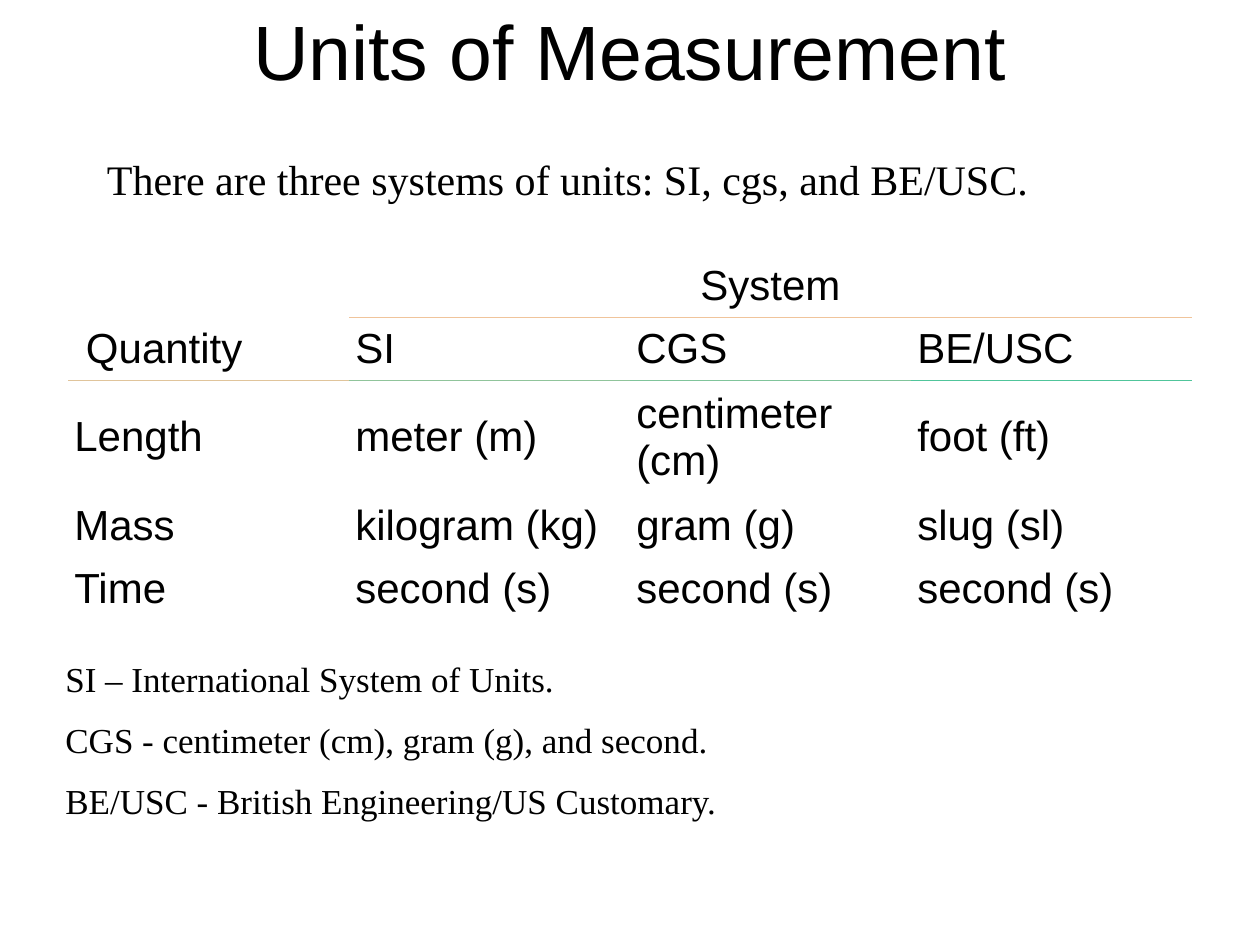
from dataclasses import dataclass

from lxml.etree import SubElement
from pptx import Presentation
from pptx.dml.color import RGBColor
from pptx.enum.text import MSO_ANCHOR as Anchor, PP_ALIGN as Align
from pptx.oxml.ns import qn
from pptx.util import Inches, Pt

BLACK = RGBColor(0x00, 0x00, 0x00)
HEAD_RULE = RGBColor(0xF0, 0xC4, 0x9B)
COLUMN_RULES = [
    RGBColor(0xE0, 0xC4, 0x9B),
    RGBColor(0x90, 0xC4, 0x9B),
    RGBColor(0x80, 0xC4, 0x9B),
    RGBColor(0x50, 0xC5, 0x9B),
]
SANS, SERIF = "Arial", "Times New Roman"
WIDTH, HEIGHT = Inches(10), Inches(7.5)
COL_W, ROW_H = Inches(2.23), Inches(0.5)
RULE_W = Pt(0.75)

UNITS = [
    ["", "System", "", ""],
    [" Quantity", "SI", "CGS", "BE/USC"],
    ["Length", "meter (m)", "centimeter (cm)", "foot (ft)"],
    ["Mass", "kilogram (kg)", "gram (g)", "slug (sl)"],
    ["Time", "second (s)", "second (s)", "second (s)"],
]


@dataclass
class TextBlock:
    """Text box; left, top, width and height are shares of the slide."""
    left: float
    top: float
    width: float
    height: float
    lines: list[str]
    size: int
    font: str = SERIF
    align: Align = Align.LEFT
    anchor: Anchor = Anchor.TOP
    gap: int = 0
    end_break: bool = False


BLOCKS = [
    TextBlock(0.075, 0.023, 0.85, 0.156, ["Units of Measurement"], 44, SANS,
              Align.CENTER, Anchor.MIDDLE, end_break=True),
    TextBlock(0.075, 0.156, 0.758, 0.067,
              ["There are three systems of units: SI, cgs, and BE/USC."], 24),
    TextBlock(0.042, 0.689, 0.975, 0.193,
              ["SI – International System of Units.",
               "CGS - centimeter (cm), gram (g), and second.",
               "BE/USC - British Engineering/US Customary."], 20, gap=11),
]


def add_run(p, text: str, size: int, font: str) -> None:
    r = p.add_run()
    r.text = text
    r.font.size, r.font.name = Pt(size), font
    r.font.color.rgb = BLACK


def draw_text(slide, block: TextBlock) -> None:
    sp = slide.shapes.add_textbox(
        int(block.left * WIDTH), int(block.top * HEIGHT),
        int(block.width * WIDTH), int(block.height * HEIGHT))
    tf = sp.text_frame
    tf.word_wrap = True
    tf.vertical_anchor = block.anchor
    for i, line in enumerate(block.lines):
        p = tf.add_paragraph() if i else tf.paragraphs[0]
        p.alignment = block.align
        p.space_before = Pt(block.gap if i else 0)
        add_run(p, line, block.size, block.font)
    if block.end_break:
        p.add_line_break()
        p.font.size = Pt(block.size)


def rule_below(row: int, col: int) -> RGBColor | None:
    """Colour of the rule under a cell, if it has one."""
    if row == 0 and col > 0:
        return HEAD_RULE
    return COLUMN_RULES[col] if row == 1 else None


def set_borders(cell, top: RGBColor | None, bottom: RGBColor | None) -> None:
    tc_pr = cell._tc.get_or_add_tcPr()
    for side, color in (("L", None), ("R", None), ("T", top), ("B", bottom)):
        ln = SubElement(tc_pr, qn(f"a:ln{side}"), w=str(RULE_W))
        if color is None:
            SubElement(ln, qn("a:noFill"))
        else:
            fill = SubElement(ln, qn("a:solidFill"))
            SubElement(fill, qn("a:srgbClr"), val=str(color))


def draw_table(slide, rows: list[list[str]]) -> None:
    n_rows, n_cols = len(rows), len(rows[0])
    table = slide.shapes.add_table(
        n_rows, n_cols, Inches(0.54), Inches(2.02),
        COL_W * n_cols, ROW_H * n_rows).table
    table.first_row = table.horz_banding = False
    table.cell(0, 1).merge(table.cell(0, n_cols - 1))
    for i, row in enumerate(rows):
        for j, text in enumerate(row):
            cell = table.cell(i, j)
            cell.margin_left = cell.margin_right = Inches(0.05)
            cell.margin_top = cell.margin_bottom = Inches(0.05)
            cell.vertical_anchor = Anchor.MIDDLE
            set_borders(cell, rule_below(i - 1, j), rule_below(i, j))
            cell.fill.background()
            if text:
                p = cell.text_frame.paragraphs[0]
                p.alignment = Align.LEFT if i else Align.CENTER
                add_run(p, text, 24, SANS)


def main() -> None:
    prs = Presentation()
    prs.slide_width, prs.slide_height = WIDTH, HEIGHT
    slide = prs.slides.add_slide(prs.slide_layouts[6])

    # Title, introduction and abbreviations
    for block in BLOCKS:
        draw_text(slide, block)

    # Units by quantity and system
    draw_table(slide, UNITS)

    prs.save("out.pptx")


if __name__ == "__main__":
    main()
